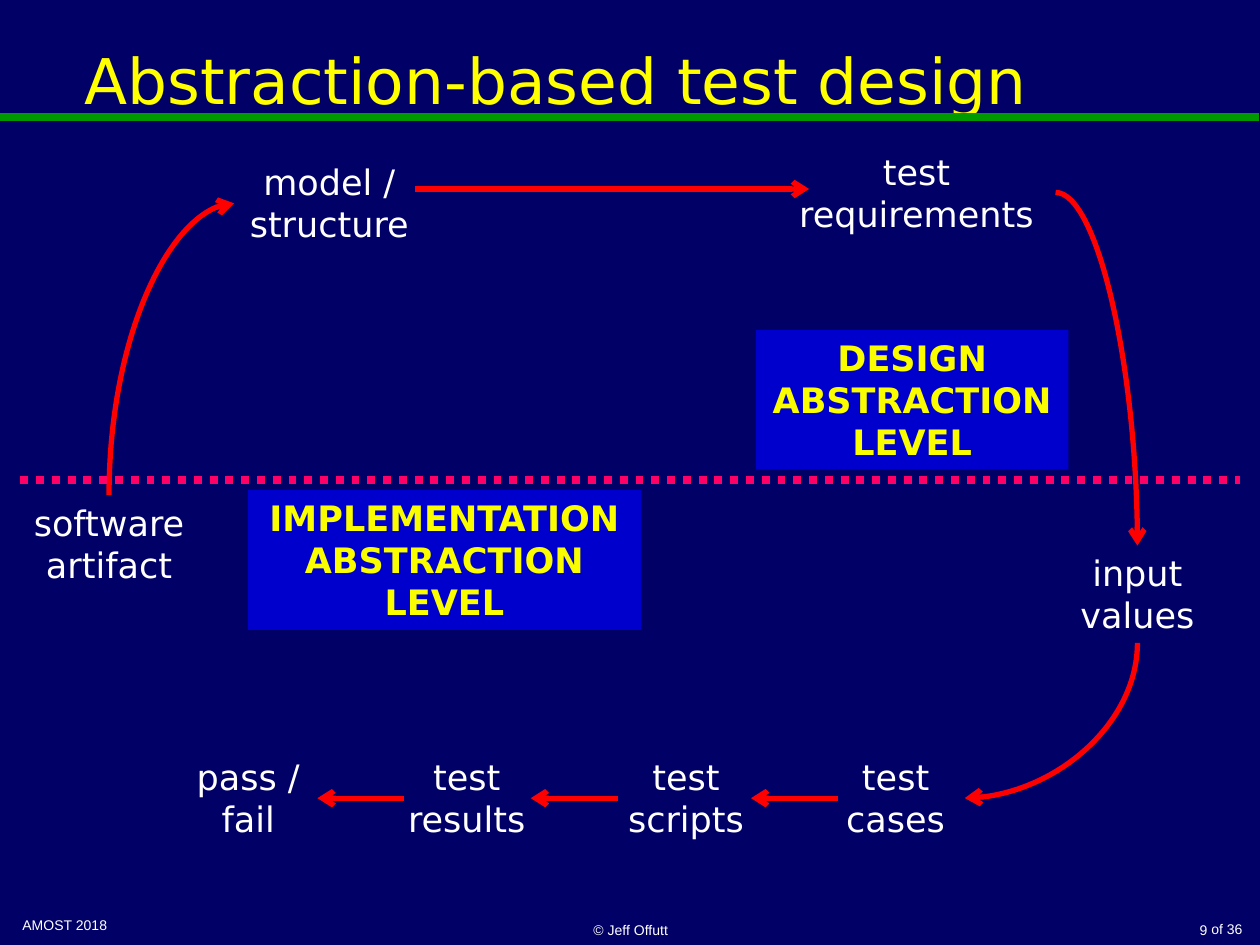
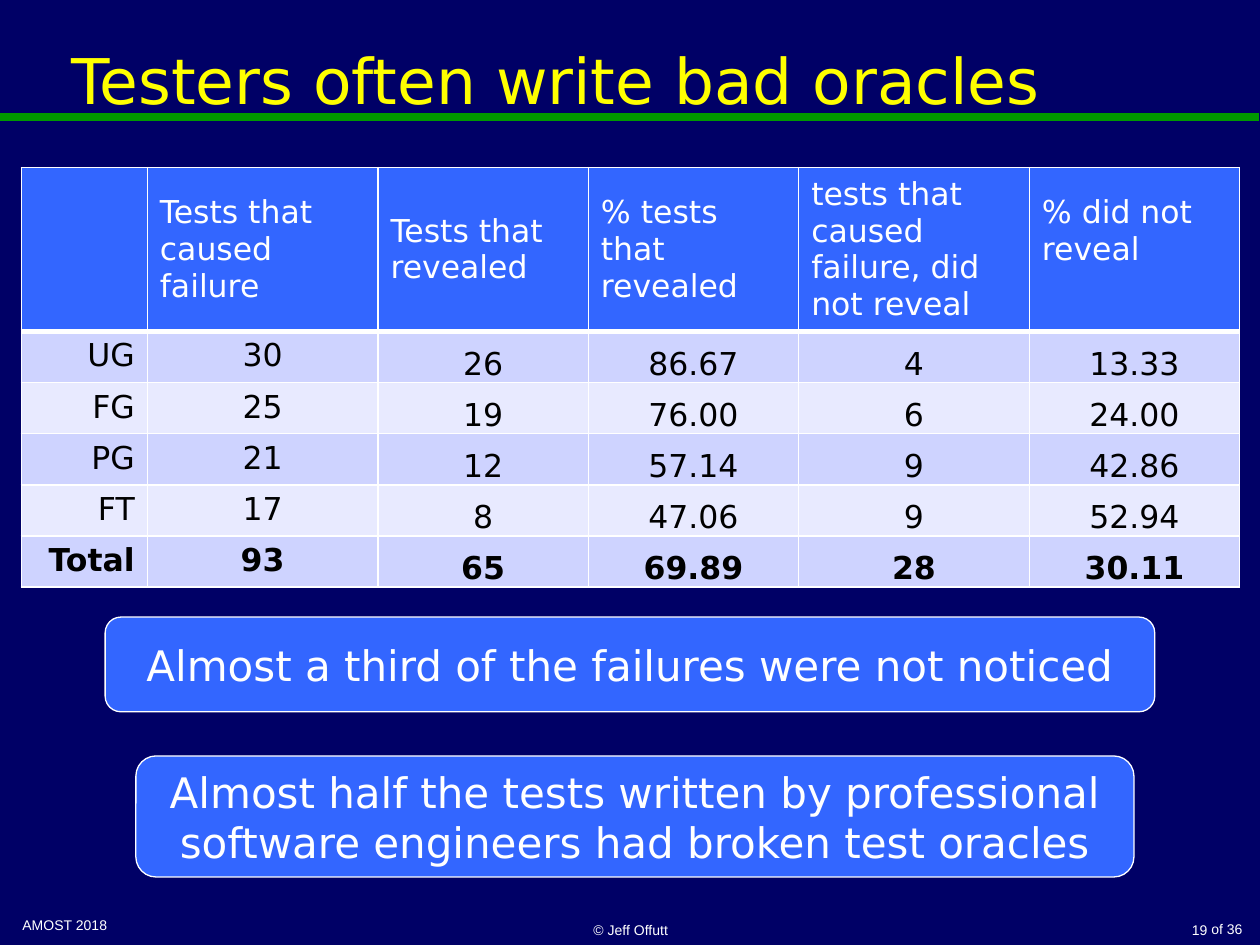
from dataclasses import dataclass

from lxml.etree import SubElement
from pptx import Presentation
from pptx.dml.color import RGBColor
from pptx.enum.dml import MSO_LINE
from pptx.enum.shapes import MSO_CONNECTOR as Link, MSO_SHAPE as Preset
from pptx.enum.text import MSO_ANCHOR as Anchor, PP_ALIGN as Align
from pptx.oxml import parse_xml
from pptx.oxml.ns import nsdecls, qn
from pptx.util import Cm, Pt


@dataclass(frozen=True)
class Theme:
    background: str = "000066"
    rule: str = "009900"
    title: str = "FFFF00"
    text: str = "FFFFFF"
    dark_text: str = "000000"
    arrow: str = "FF0000"
    divider: str = "FF0066"
    level_fill: str = "0000CC"
    level_text: str = "FAFD00"
    accent: str = "3366FF"
    bands: tuple = ("CED3FF", "E8EAFF")
    font: str = "DejaVu Sans"
    footer_font: str = "Arial"
    title_size: int = 36
    callout_size: int = 24
    diagram_size: int = 20
    table_size: int = 18
    footer_size: int = 8


THEME = Theme()

# All positions and lengths below are in centimetres.
FOOTER_LEFT, FOOTER_MIDDLE, TOTAL_PAGES = "AMOST 2018", "© Jeff Offutt", "of 36"

DESIGN_TITLE, DESIGN_PAGE = "Abstraction-based test design", "9"
STEP_HEIGHT, BOTTOM_ROW = 1.96, 15.11
STEPS = {  # text: left, top, width
    "software artifact": (0.28, 9.98, 3.84),
    "model / structure": (4.72, 3.12, 3.84),
    "test requirements": (15.67, 2.9, 5.61),
    "input values": (21.01, 11, 3.84),
    "test cases": (16.66, BOTTOM_ROW, 2.79),
    "test scripts": (12.24, BOTTOM_ROW, 3.18),
    "test results": (7.82, BOTTOM_ROW, 3.18),
    "pass / fail": (3.43, BOTTOM_ROW, 3.15),
}
TOP, LEFT, BOTTOM, RIGHT = range(4)
CURVES = [  # each leaves its first step sideways; the last item is the pointed end
    ("model / structure", LEFT, "software artifact", TOP, "headEnd"),
    ("test requirements", RIGHT, "input values", TOP, "tailEnd"),
    ("test cases", RIGHT, "input values", BOTTOM, "headEnd"),
]
MODEL_ARROW = (8.36, 16.31, 3.81)  # start, end, height on the slide
BACK_ARROW_STARTS, BACK_ARROW_LENGTH = (16.89, 12.45, 8.36 - 0.21), 1.75
LEVEL_HEIGHT = 2.82
LEVELS = [
    ("IMPLEMENTATION\nABSTRACTION\nLEVEL", 5, 9.88, 7.92),
    ("DESIGN\nABSTRACTION\nLEVEL", 15.24, 6.65, 6.3),
]
DIVIDER = (0.41, 24.99, 9.68)

ORACLE_TITLE, ORACLE_PAGE = "Testers often write bad oracles", "19"
RESULTS = [
    ("", "Tests that caused failure", "Tests that revealed", "% tests that revealed",
     "tests that caused failure, did not reveal", "% did not reveal"),
    ("UG", "30", "26", "86.67", "4", "13.33"),
    ("FG", "25", "19", "76.00", "6", "24.00"),
    ("PG", "21", "12", "57.14", "9", "42.86"),
    ("FT", "17", "8", "47.06", "9", "52.94"),
    ("Total", "93", "65", "69.89", "28", "30.11"),
]
COLUMN_WIDTHS = (2.54, 4.65, 4.24, 4.24, 4.65, 4.24)
HEADER_HEIGHT, ROW_HEIGHT = 3.18, 1.03
CALLOUTS = [
    ("Almost a third of the failures were not noticed", 2.12, 12.44, 21.16, 1.91),
    ("Almost half the tests written by professional software engineers "
     "had broken test oracles", 2.74, 15.24, 20.12, 2.44),
]


def rgb(color):
    return RGBColor.from_string(color)


def write(frame, text, size, color=THEME.text, font=THEME.font, bold=False,
          align=Align.CENTER, anchor=Anchor.TOP, wrap=True):
    frame.text = text
    frame.word_wrap = wrap
    frame.vertical_anchor = anchor
    style_paragraphs(frame, size, color, font, bold, align)


def style_paragraphs(frame, size, color, font, bold, align):
    for paragraph in frame.paragraphs:
        paragraph.alignment = align
        for run in paragraph.runs:
            run.font.size, run.font.name, run.font.bold = Pt(size), font, bold
            run.font.color.rgb = rgb(color)


def add_text(slide, box, text, size, **style):
    holder = slide.shapes.add_textbox(*map(Cm, box))
    write(holder.text_frame, text, size, **style)
    return holder


def add_block(slide, preset, box, fill, outline=None):
    block = slide.shapes.add_shape(preset, *map(Cm, box))
    block.shadow.inherit = False
    block.fill.solid()
    block.fill.fore_color.rgb = rgb(fill)
    if outline:
        block.line.color.rgb = rgb(outline)
        block.line.width = Pt(0.75)
    else:
        block.line.fill.background()
    return block


def add_line(slide, ends, color, width, dash=None, pointed=None, kind=Link.STRAIGHT):
    line = slide.shapes.add_connector(kind, *map(Cm, ends))
    line.line.color.rgb = rgb(color)
    line.line.width = Pt(width)
    if dash:
        line.line.dash_style = dash
    properties = line._element.spPr
    if pointed:
        SubElement(properties.find(qn("a:ln")), qn(f"a:{pointed}"), type="arrow")
    SubElement(properties, qn("a:effectLst"))
    return line


def add_level_line(slide, start, end, y, *args, **style):
    return add_line(slide, (start, y, end, y), *args, **style)


def add_curve(slide, source, source_side, target, target_side, pointed):
    """Glue a quarter curve to the given sides of two steps."""
    curve = add_line(slide, (0, 0, 1, 1), THEME.arrow, 3, pointed=pointed, kind=Link.CURVE)
    curve._element.spPr.find(qn("a:prstGeom")).set("prst", "curvedConnector2")
    curve.begin_connect(source, source_side)
    curve.end_connect(target, target_side)


def start_slide(deck, title, page):
    """Add a slide with the shared title, green rule and footers."""
    slide = deck.slides.add_slide(deck.slide_layouts.get_by_name("Title Only"))
    add_level_line(slide, 0, 25.37, 2.36, THEME.rule, 4.5)
    heading = slide.shapes.title
    heading.left, heading.top, heading.width, heading.height = map(Cm, (0.2, 0, 22.02, 3.18))
    write(heading.text_frame, title, THEME.title_size, THEME.title, anchor=Anchor.MIDDLE)
    footers = [
        (FOOTER_LEFT, (0.2, 18.36, 5.92, 0.66), Align.LEFT, Anchor.TOP),
        (FOOTER_MIDDLE, (8.69, 18.21, 8.05, 0.84), Align.CENTER, Anchor.BOTTOM),
        (page, (19.99, 18.21, 4.6, 0.84), Align.RIGHT, Anchor.BOTTOM),
        (TOTAL_PAGES, (24.13, 18.44, 1.17, 0.61), Align.RIGHT, Anchor.TOP),
    ]
    for text, box, align, anchor in footers:
        footer = add_text(slide, box, text, THEME.footer_size, font=THEME.footer_font,
                          align=align, anchor=anchor)
        if text == TOTAL_PAGES:
            footer.text_frame.margin_left = 0
    return slide


def build_design_slide(deck):
    slide = start_slide(deck, DESIGN_TITLE, DESIGN_PAGE)
    steps = {text: add_text(slide, (*place, STEP_HEIGHT), text, THEME.diagram_size)
             for text, place in STEPS.items()}
    add_level_line(slide, *MODEL_ARROW, THEME.arrow, 3, pointed="tailEnd")
    for start in BACK_ARROW_STARTS:
        add_level_line(slide, start, start - BACK_ARROW_LENGTH, BOTTOM_ROW + STEP_HEIGHT / 2,
                       THEME.arrow, 3, pointed="tailEnd")
    for text, *place in LEVELS:
        level = add_block(slide, Preset.RECTANGLE, (*place, LEVEL_HEIGHT), THEME.level_fill)
        write(level.text_frame, text, THEME.diagram_size, THEME.level_text, bold=True, wrap=False)
    for source, source_side, target, target_side, pointed in CURVES:
        add_curve(slide, steps[source], source_side, steps[target], target_side, pointed)
    add_level_line(slide, *DIVIDER, THEME.divider, 4.5, dash=MSO_LINE.ROUND_DOT)


def set_borders(cell, **widths):
    properties = cell._tc.get_or_add_tcPr()
    for position, side in enumerate("LRTB"):
        properties.insert(position, parse_xml(
            f'<a:ln{side} {nsdecls("a")} w="{Pt(widths.get(side, 1))}"><a:solidFill>'
            f'<a:srgbClr val="{THEME.text}"/></a:solidFill></a:ln{side}>'))


def format_cell(cell, row, column):
    header, label = row == 0, column == 0
    cell.fill.solid()
    cell.fill.fore_color.rgb = rgb(THEME.accent if header else THEME.bands[(row - 1) % 2])
    if header:
        align, cell.vertical_anchor = Align.LEFT, Anchor.MIDDLE
        if column == len(COLUMN_WIDTHS) - 1:
            cell.margin_bottom = Cm(0.87)  # lifts the last heading by half a line
    else:
        align = Align.RIGHT if label else Align.CENTER
        if column > 1:
            cell.vertical_anchor = Anchor.BOTTOM
            cell.margin_left = cell.margin_right = cell.margin_top = Cm(0.03)
            cell.margin_bottom = 0
    style_paragraphs(cell.text_frame, THEME.table_size,
                     THEME.text if header else THEME.dark_text, THEME.font,
                     row == len(RESULTS) - 1, align)
    set_borders(cell, T=3 if row == 1 else 1, B=3 if header else 1)


def build_oracle_slide(deck):
    slide = start_slide(deck, ORACLE_TITLE, ORACLE_PAGE)
    heights = [HEADER_HEIGHT] + [ROW_HEIGHT] * (len(RESULTS) - 1)
    box = (0.43, 3.38, sum(COLUMN_WIDTHS), sum(heights))
    table = slide.shapes.add_table(len(RESULTS), len(COLUMN_WIDTHS), *map(Cm, box)).table
    for column, width in zip(table.columns, COLUMN_WIDTHS):
        column.width = Cm(width)
    for row, (height, values) in enumerate(zip(heights, RESULTS)):
        table.rows[row].height = Cm(height)
        for column, value in enumerate(values):
            cell = table.cell(row, column)
            cell.text = value
            format_cell(cell, row, column)
    for text, *place in CALLOUTS:
        callout = add_block(slide, Preset.ROUNDED_RECTANGLE, place, THEME.accent, THEME.text)
        write(callout.text_frame, text, THEME.callout_size, anchor=Anchor.MIDDLE)


def main():
    deck = Presentation()
    deck.slide_width, deck.slide_height = Cm(25.4), Cm(19.05)
    backdrop = deck.slide_master.background.fill
    backdrop.solid()
    backdrop.fore_color.rgb = rgb(THEME.background)
    build_design_slide(deck)
    build_oracle_slide(deck)
    deck.save("out.pptx")


if __name__ == "__main__":
    main()
